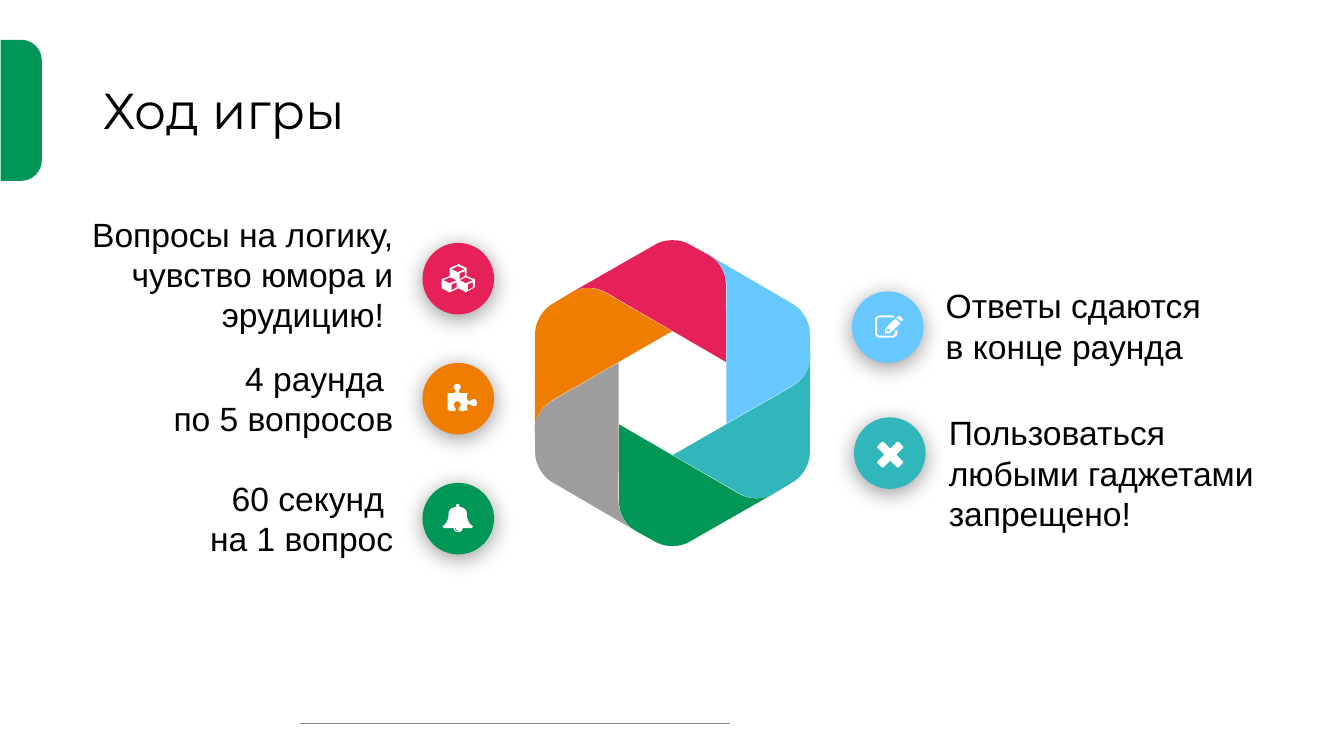
from dataclasses import dataclass
from math import cos, radians, sin

from lxml.etree import SubElement
from pptx import Presentation
from pptx.dml.color import RGBColor
from pptx.enum.shapes import MSO_CONNECTOR, MSO_SHAPE
from pptx.enum.text import MSO_ANCHOR, PP_ALIGN
from pptx.oxml.ns import qn
from pptx.util import Inches, Pt


@dataclass(frozen=True)
class Theme:
    pink: str = "E6215A"
    blue: str = "66C8FF"
    teal: str = "31B7BB"
    green: str = "009656"
    gray: str = "9E9E9E"
    orange: str = "EE7D00"
    tag: str = "009657"
    rule: str = "888888"
    white: str = "FFFFFF"
    black: str = "000000"
    head: Pt = Pt(36)
    body: Pt = Pt(24)
    head_font: str = "Montserrat"
    body_font: str = "Arial"


theme = Theme()
deck = Presentation()
deck.slide_width, deck.slide_height = Inches(13.33), Inches(7.5)
slide = deck.slides.add_slide(deck.slide_layouts[5])
shapes = slide.shapes


def draw(loops, color):
    """Fill closed loops; a step is an end point, or two controls and an end point."""
    pen = None
    for loop in loops:
        dots = [loop[0]]
        for step in loop[1:]:
            if len(step) == 2:
                dots.append(step)
                continue
            ax, ay = dots[-1]
            bx, by, cx, cy, dx, dy = step
            for i in range(1, 9):
                t = i / 8
                u = 1 - t
                p, q, r, s = u**3, 3 * u * u * t, 3 * u * t * t, t**3
                dots.append((p * ax + q * bx + r * cx + s * dx,
                             p * ay + q * by + r * cy + s * dy))
        dots = [(Inches(x), Inches(y)) for x, y in dots]
        if pen:
            pen.move_to(*dots[0])
        else:
            pen = shapes.build_freeform(*dots[0])
        pen.add_line_segments(dots[1:], close=True)
    form = pen.convert_to_shape()
    form.shadow.inherit = False
    form.fill.solid()
    form.fill.fore_color.rgb = RGBColor.from_string(color)
    form.line.fill.background()


def turn(loop, angle, mid):
    """Rotate steps given about zero by an angle in degrees, then move them to mid."""
    c, s = cos(radians(angle)), sin(radians(angle))
    out = []
    for step in loop:
        pairs = zip(step[::2], step[1::2])
        out.append(tuple(v for x, y in pairs
                         for v in (mid[0] + c * x - s * y, mid[1] + s * x + c * y)))
    return out


# Frame and title
rule = shapes.add_connector(MSO_CONNECTOR.STRAIGHT, Inches(2.98), Inches(7.18),
                            Inches(7.24), Inches(7.18))
rule.line.color.rgb = RGBColor.from_string(theme.rule)
rule.line.width = Pt(0.75)
SubElement(rule._element.spPr, qn("a:effectLst"))

tag = shapes.add_shape(MSO_SHAPE.ROUND_2_SAME_RECTANGLE, Inches(-0.49), Inches(0.89),
                       Inches(1.4), Inches(0.41))
tag.rotation = 90
tag.adjustments[0] = 0.5
tag.shadow.inherit = False
tag.fill.solid()
tag.fill.fore_color.rgb = RGBColor.from_string(theme.tag)
tag.line.fill.background()

title = shapes.title
title.left, title.top = Inches(0.92), Inches(0.4)
title.width, title.height = Inches(11.5), Inches(1.45)
title.text = "Ход игры"
title.text_frame.vertical_anchor = MSO_ANCHOR.MIDDLE
para = title.text_frame.paragraphs[0]
para.alignment = PP_ALIGN.LEFT
para.line_spacing = 0.9
para.font.name, para.font.size = theme.head_font, theme.head
para.font.color.rgb = RGBColor.from_string(theme.black)

# Steps: text, box, alignment, disc place, disc color
left, right = PP_ALIGN.LEFT, PP_ALIGN.RIGHT
steps = [
    ("Вопросы на логику, чувство юмора и эрудицию! ", (0.19, 2.12, 3.71, 1.21),
     right, (4.19, 2.41), theme.pink),
    ("4 раунда \nпо 5 вопросов", (0.68, 3.55, 3.22, 0.81), right, (4.19, 3.6), theme.orange),
    ("60 секунд \nна 1 вопрос", (0.81, 4.74, 3.09, 0.81), right, (4.19, 4.79), theme.green),
    ("Ответы сдаются \vв конце раунда", (9.38, 2.83, 3.53, 0.81),
     left, (8.45, 2.89), theme.blue),
    ("Пользоваться любыми гаджетами запрещено!", (9.41, 4.09, 3.51, 1.21),
     left, (8.47, 4.14), theme.teal),
]
for text, box, align, place, color in steps:
    label = shapes.add_textbox(*map(Inches, box))
    frame = label.text_frame
    frame.word_wrap = True
    frame.margin_left = frame.margin_right = frame.margin_top = frame.margin_bottom = 0
    frame.text = text
    for para in frame.paragraphs:
        para.alignment = align
        para.font.name, para.font.size = theme.body_font, theme.body
        para.font.color.rgb = RGBColor.from_string(theme.black)

    disc = shapes.add_shape(MSO_SHAPE.OVAL, *map(Inches, place), Inches(0.71), Inches(0.71))
    disc.fill.solid()
    disc.fill.fore_color.rgb = RGBColor.from_string(color)
    disc.line.fill.background()
    glow = SubElement(disc._element.spPr, qn("a:effectLst"))
    shade = SubElement(glow, qn("a:outerShdw"), blurRad=str(Pt(16)), dist=str(Pt(3)),
                       dir="5400000", algn="t", rotWithShape="0")
    ink = SubElement(shade, qn("a:srgbClr"), val=theme.black)
    SubElement(ink, qn("a:alpha"), val="40000")

# Icons
cubes = [[(4.71, 2.78), (4.71, 2.85), (4.62, 2.9), (4.55, 2.86), (4.46, 2.9), (4.38, 2.86),
          (4.38, 2.77), (4.46, 2.74), (4.46, 2.66), (4.55, 2.62), (4.63, 2.66),
          (4.63, 2.74), (4.71, 2.77)]]
lid = [(4.53, 2.78), (4.46, 2.75), (4.4, 2.78), (4.46, 2.81)]
side = [(4.53, 2.85), (4.53, 2.8), (4.48, 2.82), (4.48, 2.88)]
for dx, dy in [(0, 0), (0.16, 0), (0.08, -0.11)]:
    cubes += [[(x + dx, y + dy) for x, y in face] for face in (lid, side)]

puzzle = [[(4.7, 4.03), (4.68, 4.03, 4.67, 4.01, 4.65, 4.01), (4.64, 4.01, 4.63, 4.02, 4.63, 4.04),
           (4.63, 4.05, 4.64, 4.06, 4.64, 4.07), (4.62, 4.07, 4.59, 4.08, 4.58, 4.08),
           (4.56, 4.08, 4.55, 4.07, 4.55, 4.06), (4.55, 4.04, 4.57, 4.04, 4.57, 4.01),
           (4.57, 4, 4.55, 3.98, 4.54, 3.98), (4.52, 3.98, 4.5, 4, 4.5, 4.01),
           (4.5, 4.04, 4.52, 4.05, 4.52, 4.06), (4.52, 4.08, 4.5, 4.08, 4.49, 4.08),
           (4.44, 4.07), (4.44, 3.9), (4.49, 3.9), (4.5, 3.9, 4.52, 3.9, 4.52, 3.88),
           (4.52, 3.87, 4.5, 3.86, 4.5, 3.84), (4.5, 3.82, 4.52, 3.81, 4.54, 3.81),
           (4.55, 3.81, 4.57, 3.82, 4.57, 3.84), (4.57, 3.86, 4.55, 3.86, 4.55, 3.88),
           (4.55, 3.9, 4.56, 3.9, 4.58, 3.9), (4.64, 3.9), (4.63, 3.92, 4.63, 3.94, 4.63, 3.95),
           (4.63, 3.97, 4.65, 3.98, 4.66, 3.98), (4.66, 3.98, 4.68, 3.96, 4.7, 3.96),
           (4.72, 3.96, 4.73, 3.98, 4.73, 4), (4.73, 4.02, 4.72, 4.03, 4.7, 4.03)]]

bell = [[(4.67, 5.24), (4.59, 5.24), (4.59, 5.26, 4.57, 5.28, 4.54, 5.28),
         (4.52, 5.28, 4.5, 5.26, 4.5, 5.24), (4.42, 5.24), (4.4, 5.24, 4.39, 5.23, 4.39, 5.22),
         (4.42, 5.2, 4.45, 5.17, 4.45, 5.09), (4.45, 5.06, 4.48, 5.03, 4.53, 5.03), (4.52, 5.02),
         (4.52, 5.01, 4.53, 5, 4.54, 5), (4.55, 5, 4.56, 5.01, 4.56, 5.03),
         (4.6, 5.03, 4.63, 5.06, 4.63, 5.09), (4.63, 5.17, 4.66, 5.2, 4.69, 5.22),
         (4.69, 5.23, 4.68, 5.24, 4.67, 5.24)],
        [(4.54, 5.26), (4.53, 5.26, 4.52, 5.25, 4.52, 5.24), (4.51, 5.24),
         (4.51, 5.25, 4.52, 5.27, 4.54, 5.27)]]

pencil = [[(8.9, 3.27), (8.9, 3.31), (8.9, 3.33, 8.87, 3.35, 8.85, 3.35), (8.72, 3.35),
           (8.7, 3.35, 8.68, 3.33, 8.68, 3.31), (8.68, 3.18), (8.68, 3.15, 8.7, 3.13, 8.72, 3.13),
           (8.85, 3.13), (8.87, 3.14), (8.86, 3.15), (8.72, 3.15),
           (8.71, 3.15, 8.7, 3.16, 8.7, 3.18), (8.7, 3.31), (8.7, 3.32, 8.71, 3.33, 8.72, 3.33),
           (8.85, 3.33), (8.87, 3.33, 8.87, 3.32, 8.87, 3.31), (8.87, 3.29)],
          [(8.93, 3.21), (8.82, 3.31), (8.78, 3.31), (8.78, 3.26), (8.88, 3.16)],
          [(8.84, 3.28), (8.81, 3.26), (8.79, 3.27), (8.79, 3.28), (8.81, 3.28), (8.81, 3.29)],
          [(8.94, 3.19), (8.89, 3.15), (8.91, 3.14), (8.91, 3.13, 8.92, 3.13, 8.93, 3.14),
           (8.95, 3.16), (8.96, 3.17, 8.96, 3.18, 8.95, 3.18)]]

arm = [(0, -0.06), (0.06, -0.12), (0.07, -0.13, 0.08, -0.13, 0.09, -0.12), (0.12, -0.09),
       (0.13, -0.08, 0.13, -0.07, 0.12, -0.06), (0.06, 0)]
cross = [[step for i in range(4) for step in turn(arm, 90 * i, (8.83, 4.51))]]

for icon in (cubes, puzzle, bell, pencil, cross):
    draw(icon, theme.white)

# Hexagon ring, clockwise from the top
petal = [(0.53, -1.08), (0.53, -1.19, 0.47, -1.31, 0.36, -1.37), (0.16, -1.48),
         (0.07, -1.53, -0.07, -1.53, -0.16, -1.48), (-1, -1),
         (-0.9, -1.06, -0.77, -1.06, -0.66, -1), (0.53, -0.31)]
ring = (theme.pink, theme.blue, theme.teal, theme.green, theme.gray, theme.orange)
for i, color in enumerate(ring):
    draw([turn(petal, 60 * i, (6.67, 3.9))], color)

deck.save("out.pptx")
